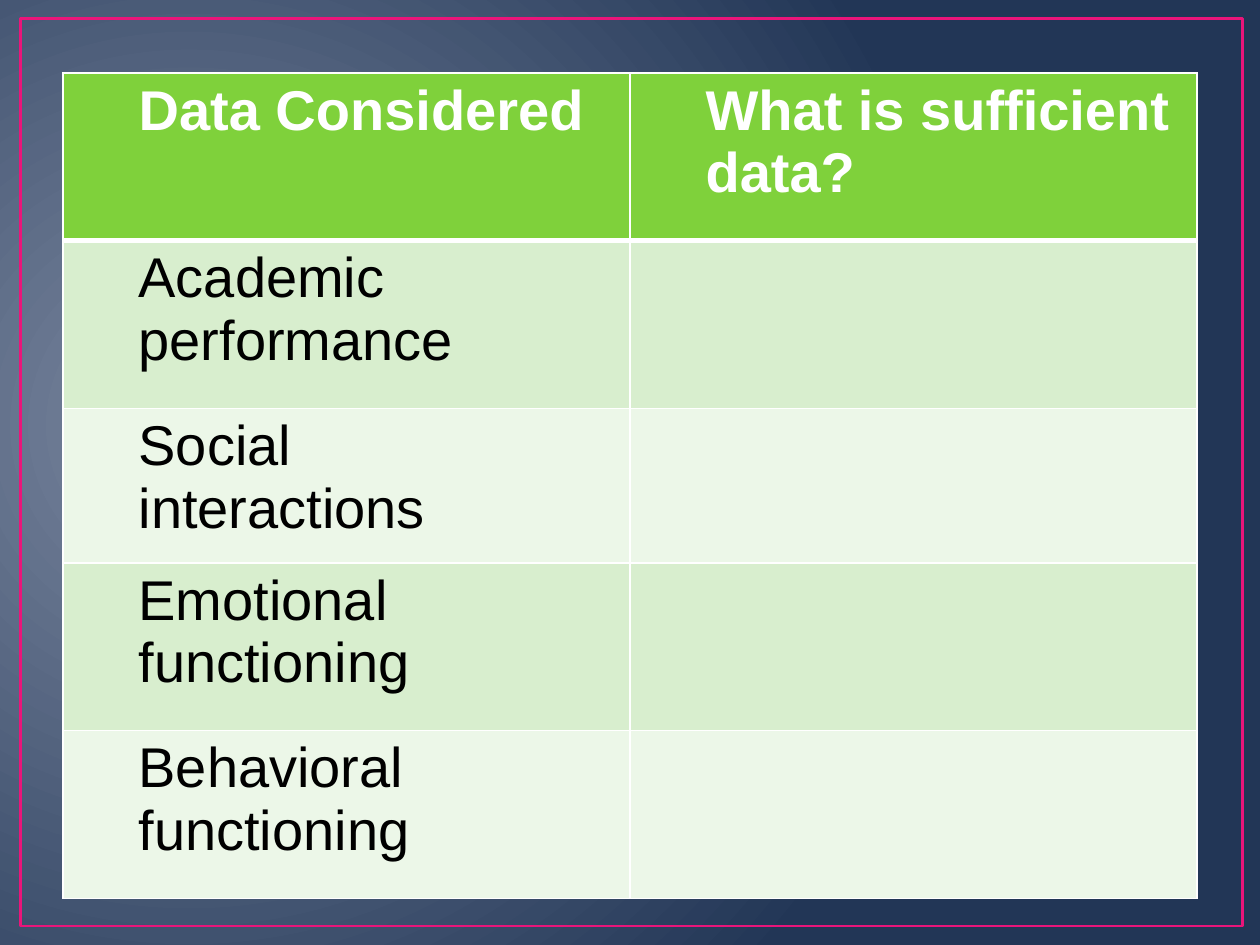
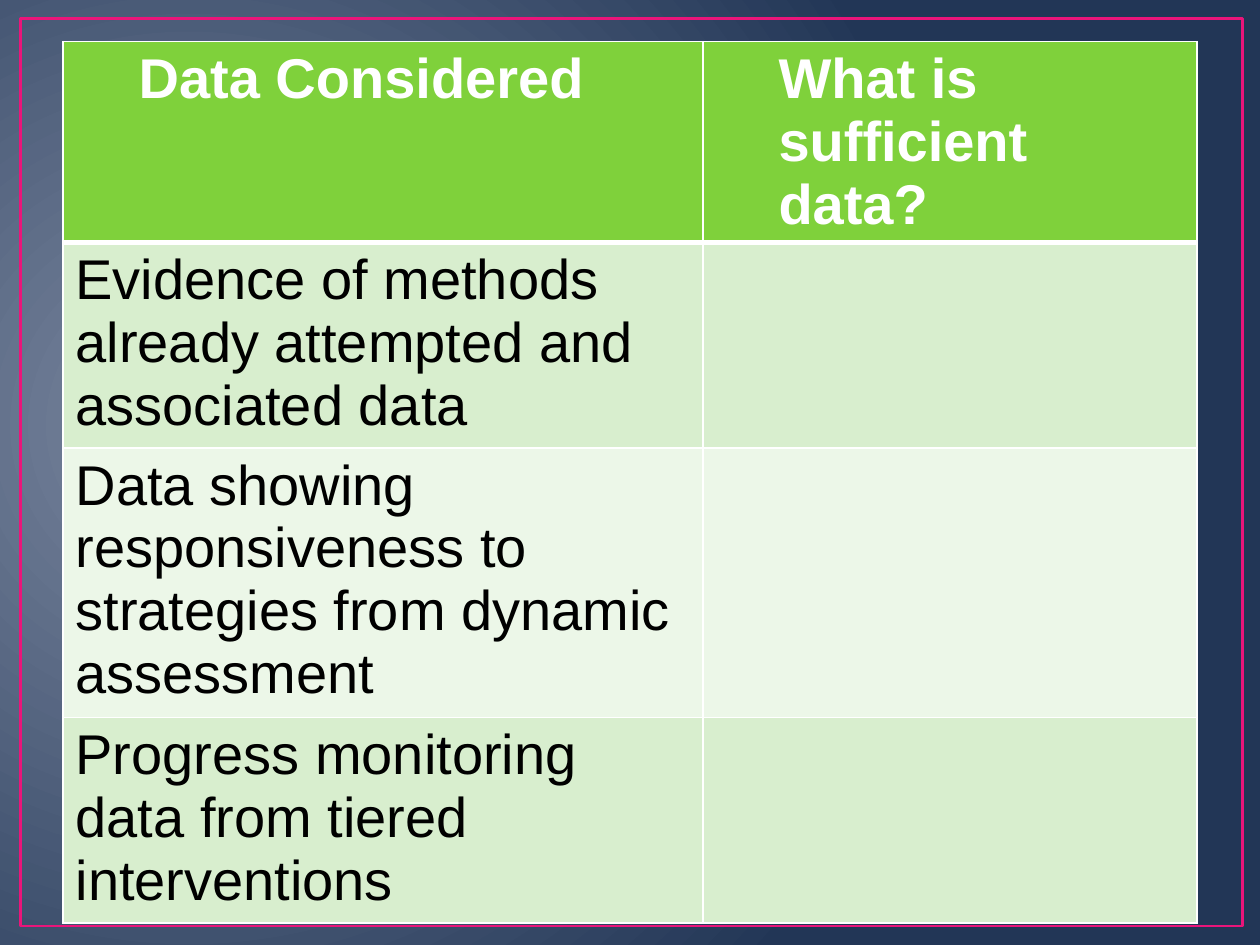
from lxml.etree import SubElement
from pptx import Presentation
from pptx.dml.color import RGBColor as Rgb
from pptx.enum.shapes import MSO_SHAPE as Shape
from pptx.oxml.ns import qn
from pptx.util import Cm, Pt

COLORS = {
    "glow": "79869E",
    "navy": "223656",
    "frame": "EA157A",
    "header": "7FD13B",
    "band_dark": "D8EECE",
    "band_light": "ECF7E8",
    "white": "FFFFFF",
    "black": "000000",
}
FONT = "Arial"
HEADINGS = ("Data Considered", "What is sufficient data?")
FRAME_BOX = (0.41, 0.38, 24.64, 18.29)
INDENT = 1.27
THIN, THICK = 1, 3


def color(name):
    return Rgb.from_string(COLORS[name])


def set_background(page):
    """Fill the page with a glow that fades to navy from the left edge."""
    fill = page.background.fill
    fill.gradient()
    for stop, name in zip(fill.gradient_stops, ("glow", "navy")):
        stop.color.rgb = color(name)
    gradient = next(page.element.iter(qn("a:gradFill")))
    gradient.remove(gradient.find(qn("a:lin")))
    circle = SubElement(gradient, qn("a:path"), path="circle")
    SubElement(circle, qn("a:fillToRect"),
               l="15000", t="50000", r="85000", b="60000")


def add_frame(page, box):
    frame = page.shapes.add_shape(Shape.RECTANGLE, *map(Cm, box))
    frame.shadow.inherit = False
    frame.fill.background()
    frame.line.color.rgb = color("frame")
    frame.line.width = Pt(1.5)


def set_borders(cell, top, bottom):
    widths = {"lnL": THIN, "lnR": THIN, "lnT": top, "lnB": bottom}
    properties = cell._tc.get_or_add_tcPr()
    for side, width in widths.items():
        line = SubElement(properties, qn(f"a:{side}"), w=str(Pt(width)))
        solid = SubElement(line, qn("a:solidFill"))
        SubElement(solid, qn("a:srgbClr"), val=COLORS["white"])


def write(cell, text, *, ink="black", bold=False, indent=0):
    """Put each line of the text in its own paragraph."""
    cell.text_frame.text = text
    for para in cell.text_frame.paragraphs:
        para._p.get_or_add_pPr().set("marL", str(Cm(indent)))
        for span in para.runs:
            font = span.font
            font.name, font.size, font.bold = FONT, Pt(32), bold
            font.color.rgb = color(ink)


def add_data_table(page, box, columns, heights, topics, topic_indent):
    """Draw the headings, then one banded row per topic with an open answer."""
    table = page.shapes.add_table(
        len(heights), len(columns), *map(Cm, box)).table
    for column, width in zip(table.columns, columns):
        column.width = Cm(width)
    for index, (row, height) in enumerate(zip(table.rows, heights)):
        row.height = Cm(height)
        band = ("band_dark" if index % 2 else "band_light") if index else "header"
        for cell in row.cells:
            set_borders(cell, top=THICK if index == 1 else THIN,
                        bottom=THIN if index else THICK)
            cell.fill.solid()
            cell.fill.fore_color.rgb = color(band)
    for cell, heading in zip(table.rows[0].cells, HEADINGS):
        write(cell, heading, ink="white", bold=True, indent=INDENT)
    for index, topic in enumerate(topics, start=1):
        write(table.cell(index, 0), topic, indent=topic_indent)


def add_page(deck, **table):
    page = deck.slides.add_slide(deck.slide_layouts[6])
    set_background(page)
    add_frame(page, FRAME_BOX)
    add_data_table(page, **table)


def main():
    deck = Presentation()
    deck.slide_width, deck.slide_height = Cm(25.4), Cm(19.05)
    add_page(
        deck,
        box=(1.27, 1.47, 22.86, 16.64),
        columns=(11.43, 11.43),
        heights=(3.38, 3.38, 3.12, 3.38, 3.38),
        topics=("Academic performance", "Social\ninteractions",
                "Emotional functioning", "Behavioral functioning"),
        topic_indent=INDENT,
    )
    add_page(
        deck,
        box=(1.27, 0.84, 22.86, 17.75),
        columns=(12.9, 9.96),
        heights=(4.04, 4.14, 5.43, 4.14),
        topics=("Evidence of methods already attempted and associated data",
                "Data showing responsiveness to strategies from dynamic assessment",
                "Progress monitoring data from tiered interventions"),
        topic_indent=0,
    )
    deck.save("out.pptx")


if __name__ == "__main__":
    main()
